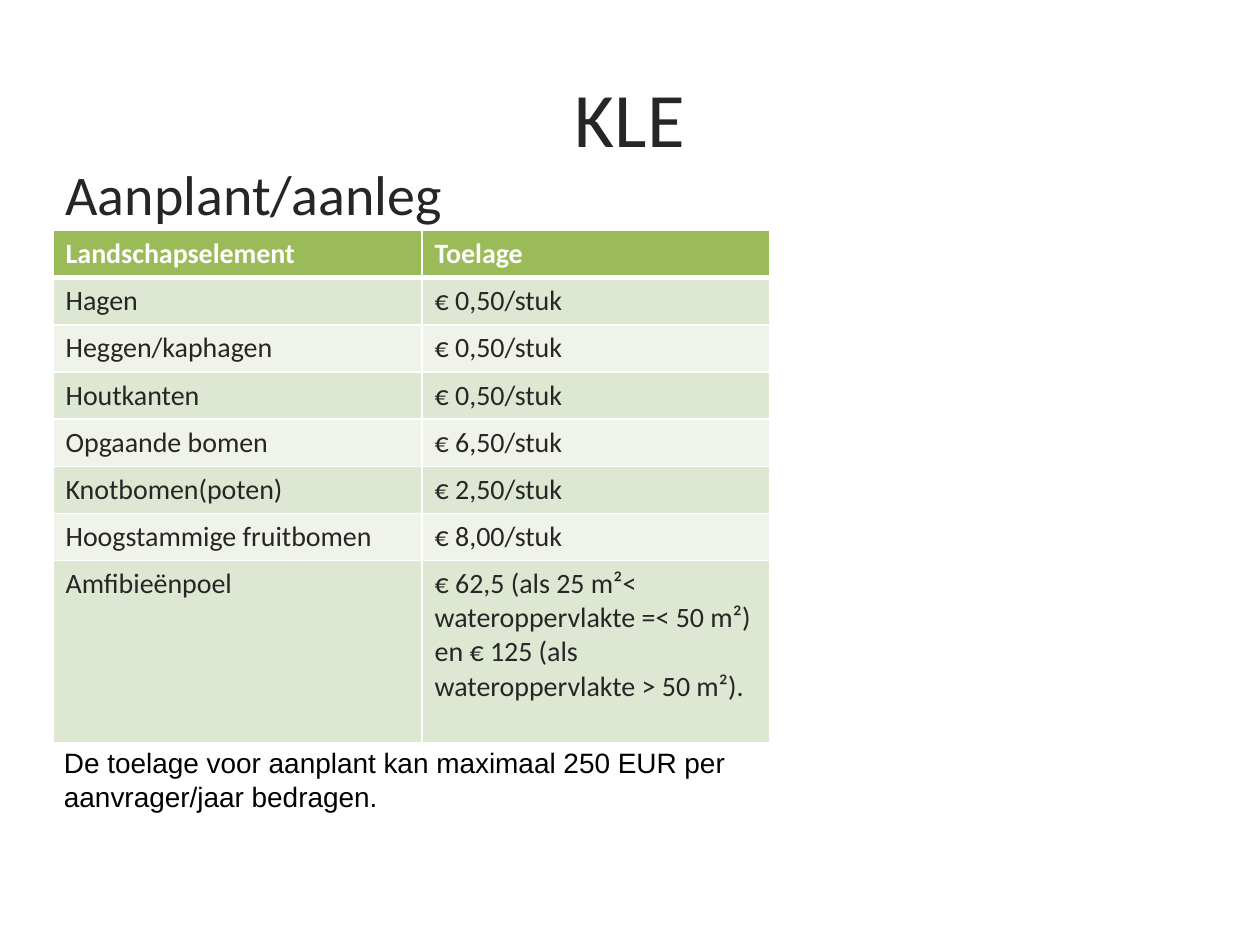
import pptx
import pptx.util
import pptx.dml.color
import pptx.enum.text
import pptx.oxml.ns
import lxml.etree

Cm = pptx.util.Cm
Pt = pptx.util.Pt
RGB = pptx.dml.color.RGBColor
ALIGN = pptx.enum.text.PP_ALIGN
ANCHOR = pptx.enum.text.MSO_ANCHOR

DARK = RGB(0x26, 0x26, 0x26)
BLACK = RGB(0, 0, 0)
WHITE = RGB(0xFF, 0xFF, 0xFF)
GREEN = RGB(0x9B, 0xBB, 0x59)
BANDS = (RGB(0xEF, 0xF3, 0xEA), RGB(0xDE, 0xE7, 0xD1))

ROWS = [
    ("Landschapselement", "Toelage"),
    ("Hagen", "€ 0,50/stuk"),
    ("Heggen/kaphagen", "€ 0,50/stuk"),
    ("Houtkanten", "€ 0,50/stuk"),
    ("Opgaande bomen", "€ 6,50/stuk"),
    ("Knotbomen(poten)", "€ 2,50/stuk"),
    ("Hoogstammige fruitbomen", "€ 8,00/stuk"),
    ("Amfibieënpoel", "€ 62,5 (als 25 m²< wateroppervlakte =< 50 m²) "
                      "en € 125 (als wateroppervlakte > 50 m²)."),
]
WIDTHS = (7.44, 7.01)
ROW_H, LAST_H = 0.95, 3.68


def style(para, size, color, name="Calibri", bold=False):
    font = para.font
    font.name, font.size, font.bold = name, Pt(size), bold
    font.color.rgb = color


def add_text(slide, text, box, size, color, name="Calibri",
             align=ALIGN.LEFT, anchor=ANCHOR.TOP):
    frame = slide.shapes.add_textbox(*map(Cm, box)).text_frame
    frame.word_wrap = True
    frame.vertical_anchor = anchor
    para = frame.paragraphs[0]
    para.text = text
    para.alignment = align
    style(para, size, color, name)


def add_edge(cell, side, width):
    props = cell._tc.get_or_add_tcPr()
    qn = pptx.oxml.ns.qn
    line = lxml.etree.SubElement(props, qn("a:ln" + side), w=str(Pt(width)))
    fill = lxml.etree.SubElement(line, qn("a:solidFill"))
    lxml.etree.SubElement(fill, qn("a:srgbClr"), val=str(WHITE))


def add_grid(slide, left, top):
    height = ROW_H * (len(ROWS) - 1) + LAST_H
    table = slide.shapes.add_table(
        len(ROWS), len(WIDTHS), Cm(left), Cm(top),
        Cm(sum(WIDTHS)), Cm(height)).table
    table.first_row = table.horz_banding = False
    for col, width in zip(table.columns, WIDTHS):
        col.width = Cm(width)
    for r, texts in enumerate(ROWS):
        head = r == 0
        table.rows[r].height = Cm(LAST_H if r == len(ROWS) - 1 else ROW_H)
        for c, text in enumerate(texts):
            cell = table.cell(r, c)
            # The line under the header is thicker than the others
            edges = {"L": 1, "R": 1, "T": 3 if r == 1 else 1,
                     "B": 3 if head else 1}
            for side, width in edges.items():
                add_edge(cell, side, width)
            cell.fill.solid()
            cell.fill.fore_color.rgb = GREEN if head else BANDS[r % 2]
            cell.text = text
            style(cell.text_frame.paragraphs[0], 16,
                  WHITE if head else DARK, bold=head)


def main():
    deck = pptx.Presentation()
    deck.slide_width, deck.slide_height = Cm(25.4), Cm(19.05)
    slide = deck.slides.add_slide(deck.slide_layouts[6])

    # Title and subtitle
    add_text(slide, "KLE", (1.27, 0.76, 22.86, 3.18), 44, DARK,
             align=ALIGN.CENTER, anchor=ANCHOR.MIDDLE)
    add_text(slide, "Aanplant/aanleg", (1.07, 3.1, 23.04, 1.63), 32, DARK)

    # Table of grants
    add_grid(slide, 1.07, 4.65)

    # Note below the table
    add_text(slide, "De toelage voor aanplant kan maximaal 250 EUR per "
             "aanvrager/jaar bedragen.", (1.04, 14.91, 16.21, 1.63),
             16, BLACK, name="Arial")

    deck.save("out.pptx")


if __name__ == "__main__":
    main()
